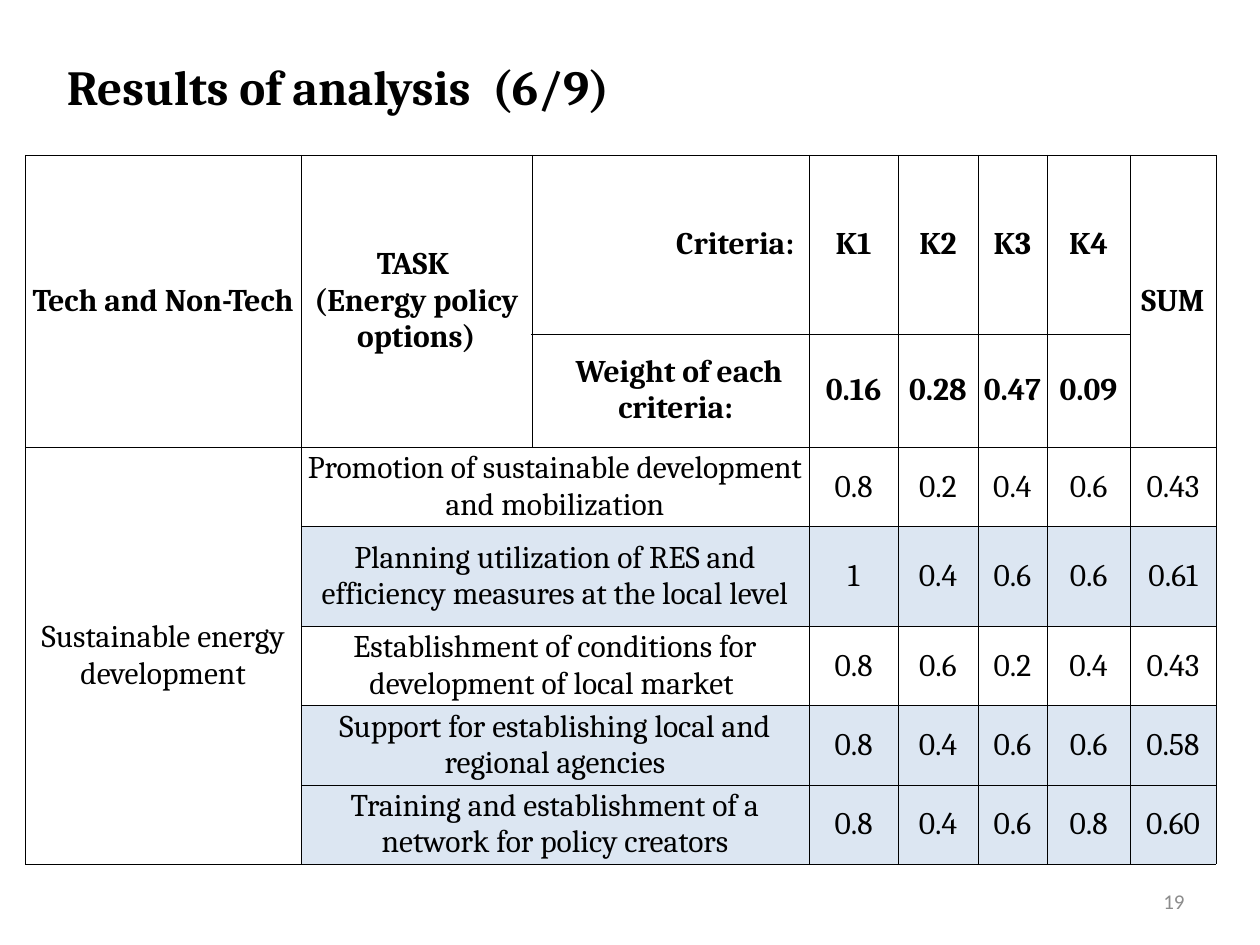
from lxml import etree
from pptx import Presentation
from pptx.dml.color import RGBColor
from pptx.enum import text
from pptx.oxml.ns import qn
from pptx.util import Inches, Pt

BLACK, GREY, LIGHT_BLUE = "000000", "8C8C8C", "DCE6F2"

COLUMNS = [2.19, 1.83, 2.2, 0.71, 0.63, 0.55, 0.66, 0.68]
ROWS = [1.42, 0.79, 0.63, 0.79, 0.63, 0.63, 0.63]

HEADER = [
    ["Tech and Non-Tech", "TASK \n(Energy policy options)", "Criteria:",
     "K1", "K2", "K3", "K4", "SUM"],
    ["", "", "Weight of each criteria: ", "0.16", "0.28", "0.47", "0.09", ""],
]
GROUP = "Sustainable energy development"
# Task, scores for K1 to K4 and sum, whether the row is highlighted
TASKS = [
    ("Promotion of sustainable development and mobilization",
     "0.8 0.2 0.4 0.6 0.43", False),
    ("Planning utilization of RES and efficiency measures at the local level",
     "1 0.4 0.6 0.6 0.61", True),
    ("Establishment of conditions for development of local market ",
     "0.8 0.6 0.2 0.4 0.43", False),
    ("Support for establishing local and regional agencies",
     "0.8 0.4 0.6 0.6 0.58", True),
    ("Training and establishment of a network for policy creators",
     "0.8 0.4 0.6 0.8 0.60", True),
]
# First and last cell of each merged area
MERGES = [((0, 0), (1, 0)), ((0, 1), (1, 1)), ((0, 7), (1, 7)), ((2, 0), (6, 0))]
MERGES += [((row, 1), (row, 2)) for row in range(2, 7)]
INDENTS = {(0, 2): 1.03, (1, 2): 0.14}


def rgb(value):
    return RGBColor.from_string(value)


def format_text(tf, font, size, color, align, bold=False):
    for p in tf.paragraphs:
        p.alignment = align
        for r in p.runs:
            r.font.name = font
            r.font.size = Pt(size)
            r.font.bold = bold
            r.font.color.rgb = rgb(color)


def add_borders(cell):
    tc_pr = cell._tc.get_or_add_tcPr()
    for side in ("lnL", "lnR", "lnT", "lnB"):
        line = etree.SubElement(tc_pr, qn(f"a:{side}"), w=str(Pt(0.25)))
        fill = etree.SubElement(line, qn("a:solidFill"))
        etree.SubElement(fill, qn("a:srgbClr"), val=BLACK)


def format_cell(cell, content, bold, fill=None, indent=0):
    cell.margin_left = cell.margin_right = Inches(0.02)
    cell.margin_top = cell.margin_bottom = 0
    cell.vertical_anchor = text.MSO_ANCHOR.MIDDLE
    add_borders(cell)
    if fill:
        cell.fill.solid()
        cell.fill.fore_color.rgb = rgb(fill)
    else:
        cell.fill.background()
    tf = cell.text_frame
    tf.text = content
    format_text(tf, "Cambria", 18, BLACK, text.PP_ALIGN.CENTER, bold)
    if indent:
        p_pr = tf.paragraphs[0]._p.get_or_add_pPr()
        p_pr.set("marL", str(Inches(indent)))
        p_pr.set("indent", "0")


def add_title(s, content):
    sp = s.shapes.title
    sp.left, sp.top = Inches(0.43), Inches(0.4)
    sp.width, sp.height = Inches(4.66), Inches(0.57)
    tf = sp.text_frame
    tf.text = content
    tf.word_wrap = False
    tf.auto_size = text.MSO_AUTO_SIZE.SHAPE_TO_FIT_TEXT
    tf.vertical_anchor = text.MSO_ANCHOR.TOP
    format_text(tf, "Cambria", 28, BLACK, text.PP_ALIGN.LEFT, bold=True)


def add_results_table(s):
    frame = s.shapes.add_table(len(ROWS), len(COLUMNS), Inches(0.2), Inches(1.23),
                               Inches(sum(COLUMNS)), Inches(sum(ROWS)))
    table = frame.table
    table.first_row = table.horz_banding = False
    for column, width in zip(table.columns, COLUMNS):
        column.width = Inches(width)
    for row, height in zip(table.rows, ROWS):
        row.height = Inches(height)

    # Header rows
    for i, labels in enumerate(HEADER):
        for j, label in enumerate(labels):
            format_cell(table.cell(i, j), label, True, indent=INDENTS.get((i, j), 0))

    # Task rows
    for i, (task, scores, highlighted) in enumerate(TASKS, len(HEADER)):
        group = GROUP if i == len(HEADER) else ""
        for j, content in enumerate([group, task, "", *scores.split()]):
            fill = LIGHT_BLUE if highlighted and j > 0 else None
            format_cell(table.cell(i, j), content, False, fill)

    for first, last in MERGES:
        table.cell(*first).merge(table.cell(*last))


def add_page_number(s, number):
    sp = s.shapes.add_textbox(Inches(7.17), Inches(6.95), Inches(2.33), Inches(0.4))
    tf = sp.text_frame
    tf.text = number
    tf.word_wrap = True
    tf.vertical_anchor = text.MSO_ANCHOR.MIDDLE
    format_text(tf, "Calibri", 12, GREY, text.PP_ALIGN.RIGHT)


def main():
    prs = Presentation()
    prs.slide_width, prs.slide_height = Inches(10), Inches(7.5)
    s = prs.slides.add_slide(prs.slide_layouts[5])
    add_title(s, "Results of analysis  (6/9)")
    add_results_table(s)
    add_page_number(s, "19")
    prs.save("out.pptx")


if __name__ == "__main__":
    main()
